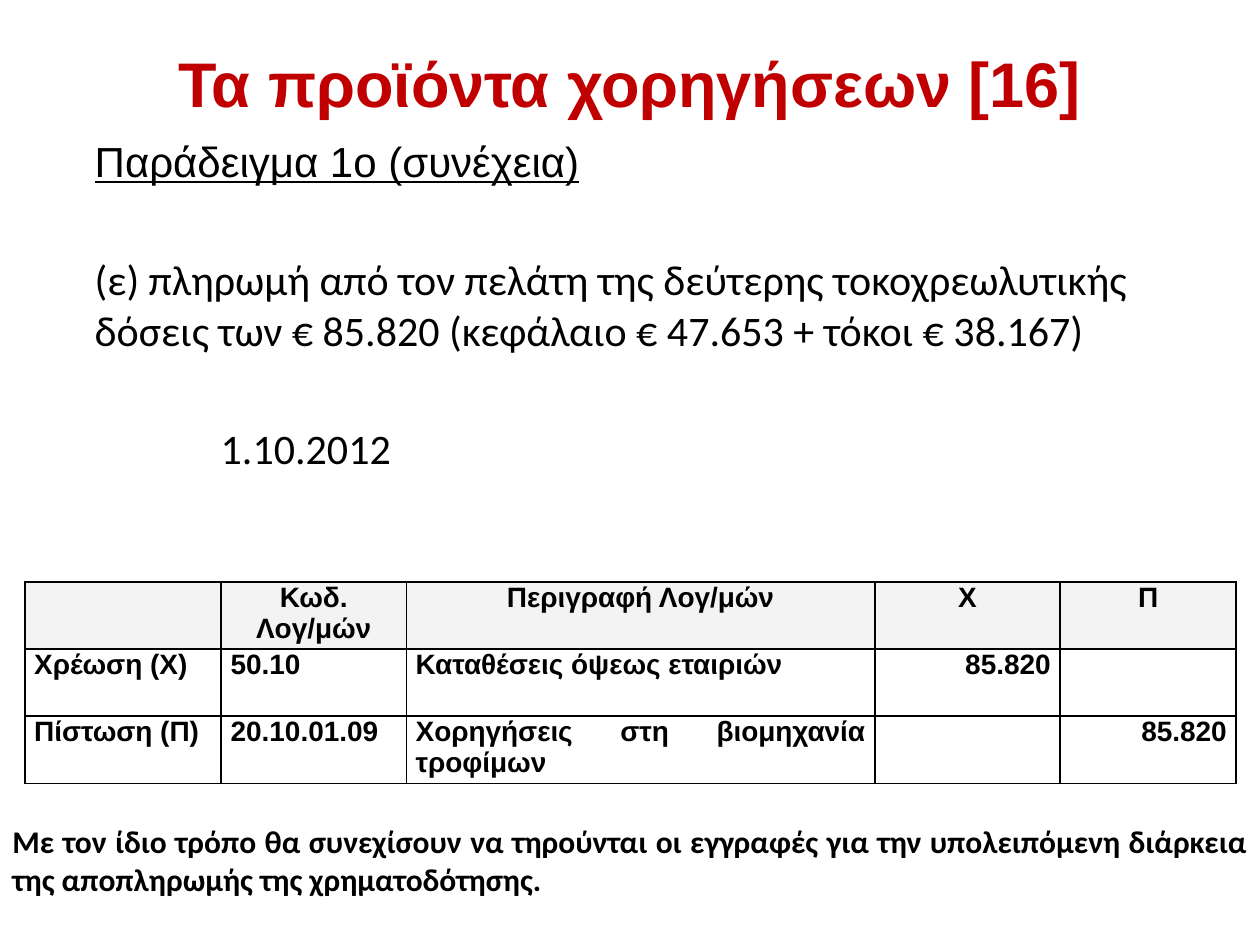
from lxml import etree
from pptx import Presentation
from pptx.dml.color import RGBColor
from pptx.enum.text import MSO_ANCHOR, MSO_AUTO_SIZE, PP_ALIGN
from pptx.oxml.ns import qn
from pptx.util import Cm, Pt

MID = MSO_ANCHOR.MIDDLE
NOFIT = MSO_AUTO_SIZE.NONE
LEFT, RIGHT = PP_ALIGN.LEFT, PP_ALIGN.RIGHT
CENTER, FULL = PP_ALIGN.CENTER, PP_ALIGN.JUSTIFY


def style(para, size, name, color="000000", bold=False, align=LEFT):
    para.alignment = align
    font = para.font
    font.size, font.name, font.bold = Pt(size), name, bold
    font.color.rgb = RGBColor.from_string(color)


def border(cell, color):
    props = cell._tc.get_or_add_tcPr()
    for i, side in enumerate(("lnL", "lnR", "lnT", "lnB")):
        line = etree.Element(qn("a:" + side), w=str(Pt(1)))
        fill = etree.SubElement(line, qn("a:solidFill"))
        etree.SubElement(fill, qn("a:srgbClr"), val=color)
        props.insert(i, line)


prs = Presentation()
prs.slide_width, prs.slide_height = Cm(25.4), Cm(19.05)
slide = prs.slides.add_slide(prs.slide_layouts[5])

# Title
title = slide.shapes.title
title.left, title.top = Cm(1.27), Cm(0.76)
title.width, title.height = Cm(22.86), Cm(1.78)
frame = title.text_frame
frame.text = "Τα προϊόντα χορηγήσεων [16]"
frame.vertical_anchor, frame.auto_size = MID, NOFIT
style(frame.paragraphs[0], 36, "Arial", "C00000", True, CENTER)

# Example text: wording, font, space before, indent
body = slide.shapes.add_textbox(Cm(1.66), Cm(2.6), Cm(23.05), Cm(8.9))
frame = body.text_frame
frame.word_wrap = True
lines = [
    ("Παράδειγμα 1ο (συνέχεια)", "Arial", 0, 0),
    ("(ε) πληρωμή από τον πελάτη της δεύτερης τοκοχρεωλυτικής δόσεις "
     "των € 85.820 (κεφάλαιο € 47.653 + τόκοι € 38.167)", "Calibri", 39, 0),
    ("1.10.2012", "Calibri", 39, 2.54),
]
for i, (text, name, gap, dent) in enumerate(lines):
    para = frame.add_paragraph() if i else frame.paragraphs[0]
    para.text = text
    style(para, 24, name)
    para.space_before = Pt(gap)
    para.font.underline = i == 0
    para._p.get_or_add_pPr().set("marL", str(Cm(dent)))

# Journal entry table
rows = [
    ("", "Κωδ. Λογ/μών", "Περιγραφή Λογ/μών", "Χ", "Π"),
    ("Χρέωση (Χ)", "50.10", "Καταθέσεις όψεως εταιριών", "85.820", ""),
    ("Πίστωση (Π)", "20.10.01.09", "Χορηγήσεις στη βιομηχανία τροφίμων",
     "", "85.820"),
]
widths = [3.96, 3.73, 9.45, 3.73, 3.55]
table = slide.shapes.add_table(3, 5, Cm(0.5), Cm(11.73),
                               Cm(sum(widths)), Cm(4.05)).table
for col, width in zip(table.columns, widths):
    col.width = Cm(width)
for r, row in enumerate(rows):
    table.rows[r].height = Cm(1.35)
    for c, text in enumerate(row):
        cell = table.cell(r, c)
        cell.text = text
        cell.margin_left = cell.margin_right = Cm(0.19)
        cell.margin_top = cell.margin_bottom = 0
        align = CENTER if r == 0 else RIGHT if c > 2 else FULL
        style(cell.text_frame.paragraphs[0], 16, "Arial", bold=True,
              align=align)
        if r == 0:
            cell.fill.solid()
            cell.fill.fore_color.rgb = RGBColor.from_string("F3F3F3")
        else:
            cell.fill.background()
        border(cell, "000000")

# Closing note
note = slide.shapes.add_textbox(0, Cm(16.43), Cm(25.4), Cm(1.8))
frame = note.text_frame
frame.word_wrap, frame.vertical_anchor = True, MID
frame.text = ("Με τον ίδιο τρόπο θα συνεχίσουν να τηρούνται οι εγγραφές για την "
              "υπολειπόμενη διάρκεια της αποπληρωμής της χρηματοδότησης.")
style(frame.paragraphs[0], 18, "Calibri", bold=True, align=FULL)

prs.save("out.pptx")
